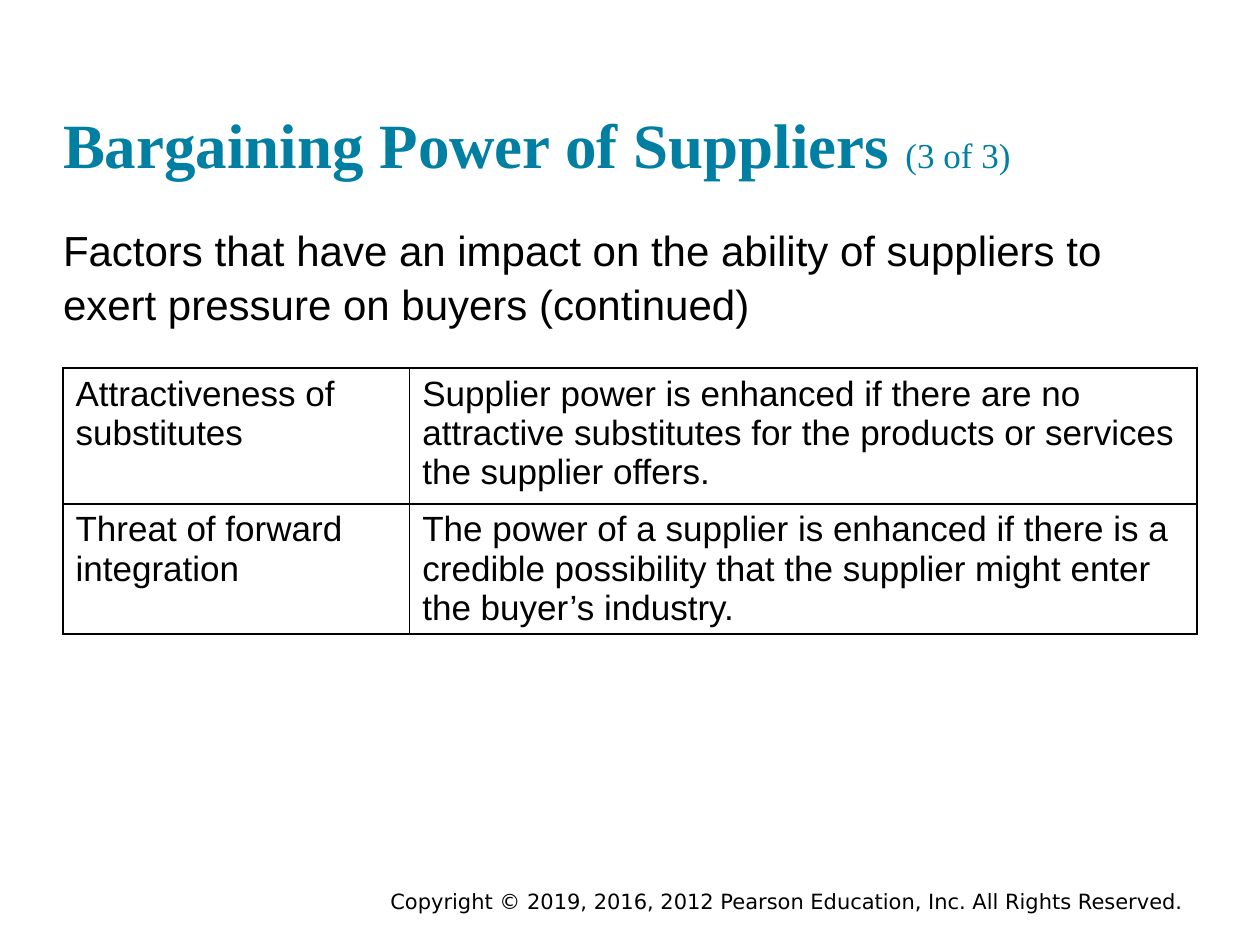
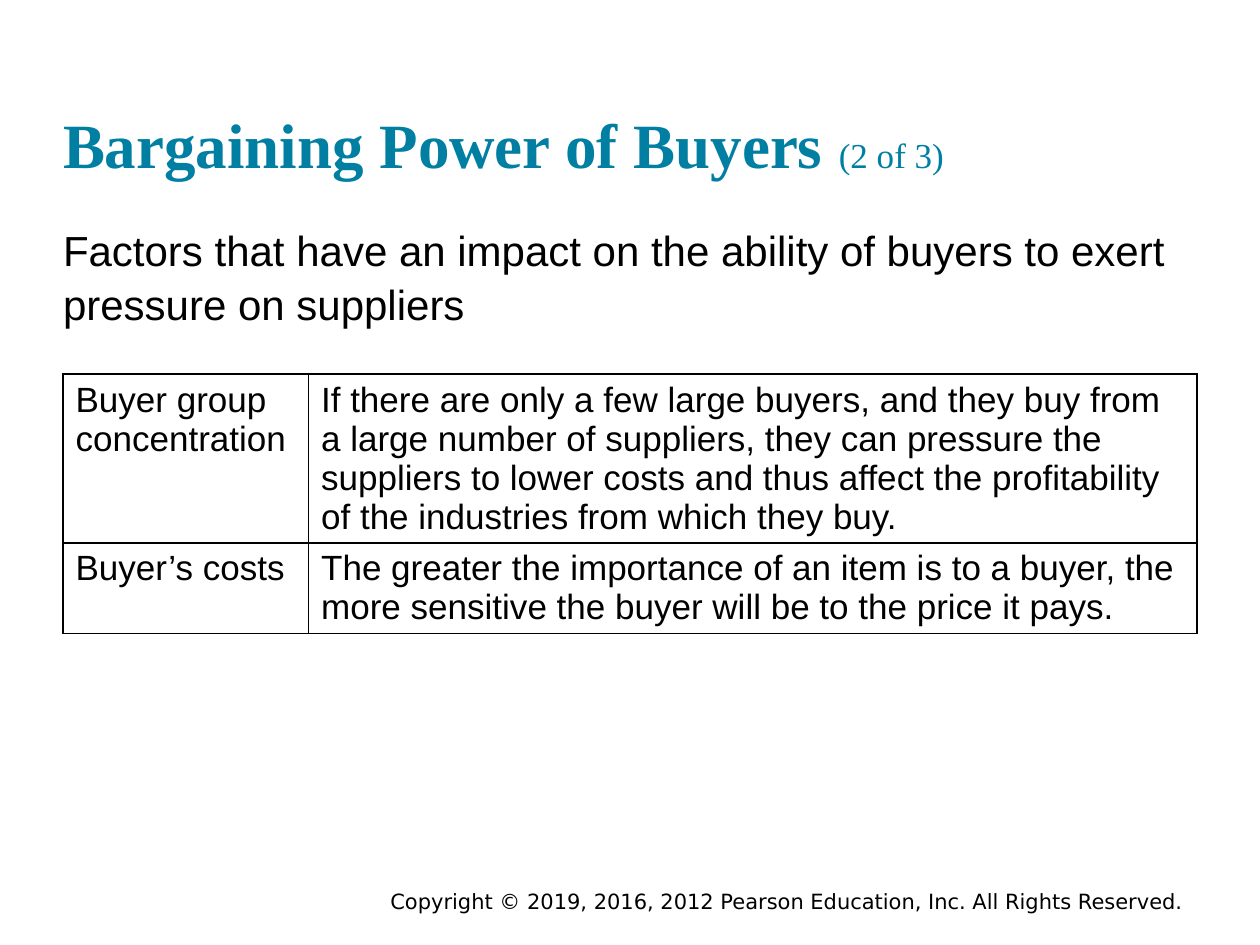
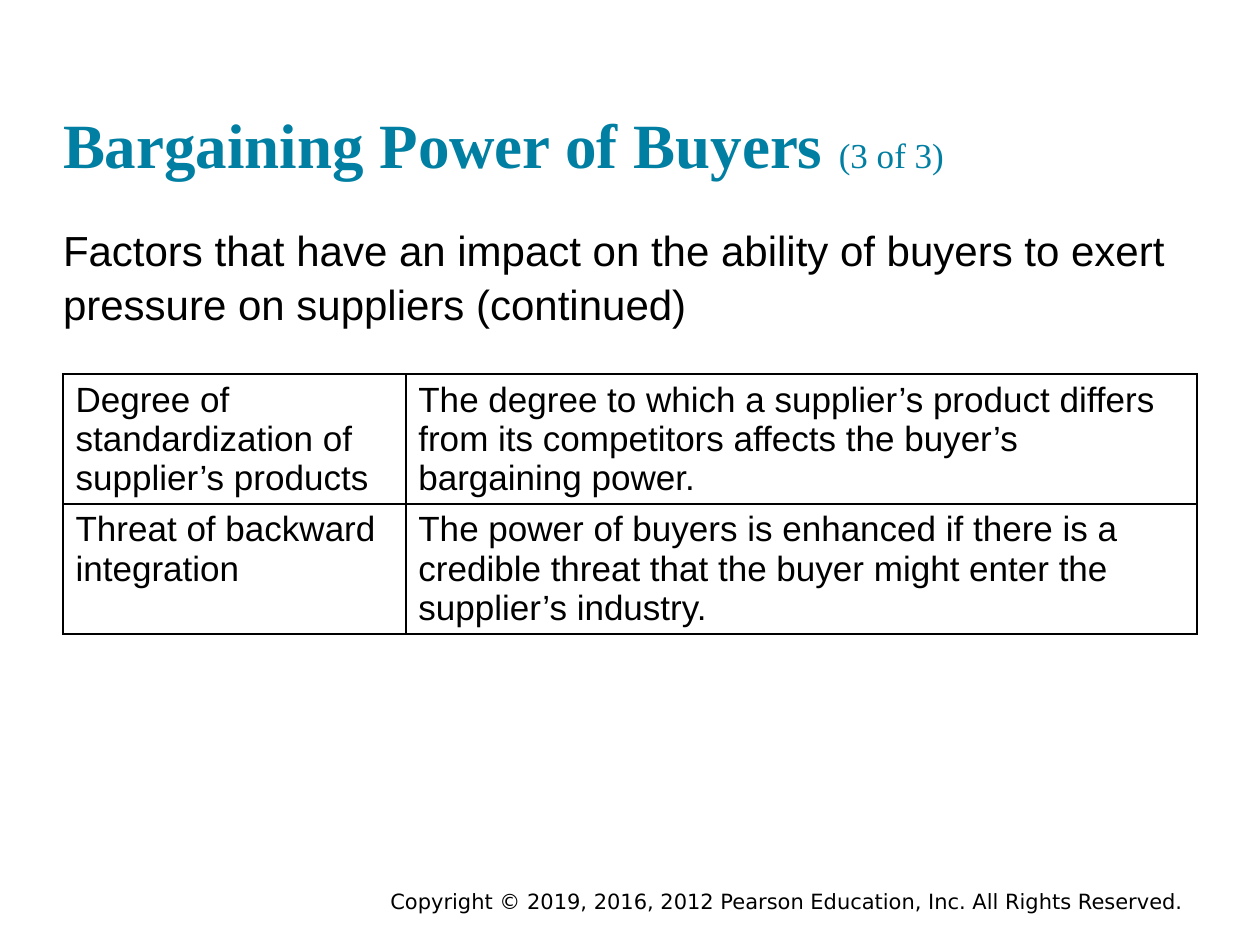
import lxml.etree
import pptx
import pptx.dml.color
import pptx.enum.text
import pptx.oxml.ns
import pptx.util

Cm = pptx.util.Cm
Pt = pptx.util.Pt

COPYRIGHT = "Copyright © 2019, 2016, 2012 Pearson Education, Inc. All Rights Reserved."

SLIDES = [
    {
        "title": "Bargaining Power of Suppliers ",
        "part": "(3 of 3)",
        "intro": "Factors that have an impact on the ability of suppliers to exert "
                 "pressure on buyers (continued)",
        "intro_height": 2.11,
        "table_top": 7.42,
        "label_width": 6.99,
        "row_heights": [2.74, 2.62],
        "factors": [
            ("Attractiveness of substitutes",
             "Supplier power is enhanced if there are no attractive substitutes "
             "for the products or services the supplier offers."),
            ("Threat of forward integration",
             "The power of a supplier is enhanced if there is a credible "
             "possibility that the supplier might enter the buyer’s industry."),
        ],
    },
    {
        "title": "Bargaining Power of Buyers ",
        "part": "(2 of 3)",
        "intro": "Factors that have an impact on the ability of buyers to exert "
                 "pressure on suppliers",
        "intro_height": 1.9,
        "table_top": 7.54,
        "label_width": 4.95,
        "row_heights": [3.4, 1.83],
        "factors": [
            ("Buyer group concentration",
             "If there are only a few large buyers, and they buy from a large "
             "number of suppliers, they can pressure the suppliers to lower costs "
             "and thus affect the profitability of the industries from which they buy."),
            ("Buyer’s costs",
             "The greater the importance of an item is to a buyer, the more "
             "sensitive the buyer will be to the price it pays."),
        ],
    },
    {
        "title": "Bargaining Power of Buyers ",
        "part": "(3 of 3)",
        "intro": "Factors that have an impact on the ability of buyers to exert "
                 "pressure on suppliers (continued)",
        "intro_height": 2.34,
        "table_top": 7.54,
        "label_width": 6.91,
        "row_heights": [2.62, 2.62],
        "factors": [
            ("Degree of standardization of supplier’s products",
             "The degree to which a supplier’s product differs from its "
             "competitors affects the buyer’s bargaining power."),
            ("Threat of backward integration",
             "The power of buyers is enhanced if there is a credible threat that "
             "the buyer might enter the supplier’s industry."),
        ],
    },
]


def rgb(color):
    return pptx.dml.color.RGBColor.from_string(color)


def place(shape, left, top, width, height):
    """Move and size a shape, in centimetres."""
    shape.left, shape.top = Cm(left), Cm(top)
    shape.width, shape.height = Cm(width), Cm(height)


def add_element(parent, tag, **attributes):
    return lxml.etree.SubElement(parent, pptx.oxml.ns.qn(tag), attributes)


class Deck:
    TEAL, BLACK, WHITE = "007FA3", "000000", "FFFFFF"
    TITLE_FONT, BODY_FONT, FOOTER_FONT = "Times New Roman", "Arial", "DejaVu Sans"
    LEFT, WIDTH = 1.27, 22.86

    def __init__(self):
        self.presentation = pptx.Presentation()
        self.presentation.slide_width = Cm(25.4)
        self.presentation.slide_height = Cm(19.05)
        self.slide = None

    def add_slide(self):
        self.slide = self.presentation.slides.add_slide(self.presentation.slide_layouts[1])
        self.slide.background.fill.solid()
        self.slide.background.fill.fore_color.rgb = rgb(self.WHITE)

    def style_run(self, run, font_name, size, color=BLACK, bold=False):
        run.font.name = font_name
        run.font.size = Pt(size)
        run.font.bold = bold
        run.font.color.rgb = rgb(color)

    def prepare_frame(self, shape, anchor):
        """Give a placeholder no insets, no shrinking and left-aligned text."""
        frame = shape.text_frame
        frame.margin_left = frame.margin_right = frame.margin_top = frame.margin_bottom = 0
        frame.word_wrap = True
        frame.auto_size = pptx.enum.text.MSO_AUTO_SIZE.NONE
        frame.vertical_anchor = anchor
        frame.paragraphs[0].alignment = pptx.enum.text.PP_ALIGN.LEFT
        return frame

    def title(self, text, part):
        shape = self.slide.shapes.title
        place(shape, self.LEFT, 0.61, self.WIDTH, 3.05)
        shape.text_frame.text = text
        frame = self.prepare_frame(shape, pptx.enum.text.MSO_ANCHOR.BOTTOM)
        paragraph = frame.paragraphs[0]
        self.style_run(paragraph.runs[0], self.TITLE_FONT, 36, self.TEAL, bold=True)
        part_run = paragraph.add_run()
        part_run.text = part
        self.style_run(part_run, self.TITLE_FONT, 20, self.TEAL)

    def intro(self, text, height):
        shape = self.slide.placeholders[1]
        place(shape, self.LEFT, 4.45, self.WIDTH, height)
        shape.text_frame.text = text
        frame = self.prepare_frame(shape, pptx.enum.text.MSO_ANCHOR.TOP)
        paragraph = frame.paragraphs[0]
        paragraph.line_spacing = 1.07
        paragraph.space_before = Pt(0)
        properties = paragraph._p.get_or_add_pPr()
        properties.set("marL", "0")
        properties.set("indent", "0")
        add_element(properties, "a:buNone")
        self.style_run(paragraph.runs[0], self.BODY_FONT, 24)

    def add_borders(self, cell):
        properties = cell._tc.get_or_add_tcPr()
        for side in ("L", "R", "T", "B"):
            line = add_element(properties, f"a:ln{side}", w=str(Pt(1)))
            fill = add_element(line, "a:solidFill")
            add_element(fill, "a:srgbClr", val=self.BLACK)

    def factor_table(self, factors, top, label_width, row_heights):
        frame = self.slide.shapes.add_table(
            len(factors), 2, Cm(self.LEFT), Cm(top), Cm(self.WIDTH), Cm(sum(row_heights)))
        table = frame.table
        table.first_row = table.horz_banding = False
        for column, width in zip(table.columns, (label_width, self.WIDTH - label_width)):
            column.width = Cm(width)
        for row, height, texts in zip(table.rows, row_heights, factors):
            row.height = Cm(height)
            for cell, text in zip(row.cells, texts):
                self.add_borders(cell)
                cell.fill.solid()
                cell.fill.fore_color.rgb = rgb(self.WHITE)
                cell.text_frame.text = text
                self.style_run(cell.text_frame.paragraphs[0].runs[0], self.BODY_FONT, 20)

    def footer(self, text):
        box = self.slide.shapes.add_textbox(Cm(7.62), Cm(17.78), Cm(16.94), Cm(0.76))
        box.text_frame.word_wrap = True
        box.text_frame.text = text
        self.style_run(box.text_frame.paragraphs[0].runs[0], self.FOOTER_FONT, 12)


def main():
    deck = Deck()
    for content in SLIDES:
        deck.add_slide()
        deck.title(content["title"], content["part"])
        deck.intro(content["intro"], content["intro_height"])
        deck.factor_table(content["factors"], content["table_top"],
                          content["label_width"], content["row_heights"])
        deck.footer(COPYRIGHT)
    deck.presentation.save("out.pptx")


if __name__ == "__main__":
    main()
